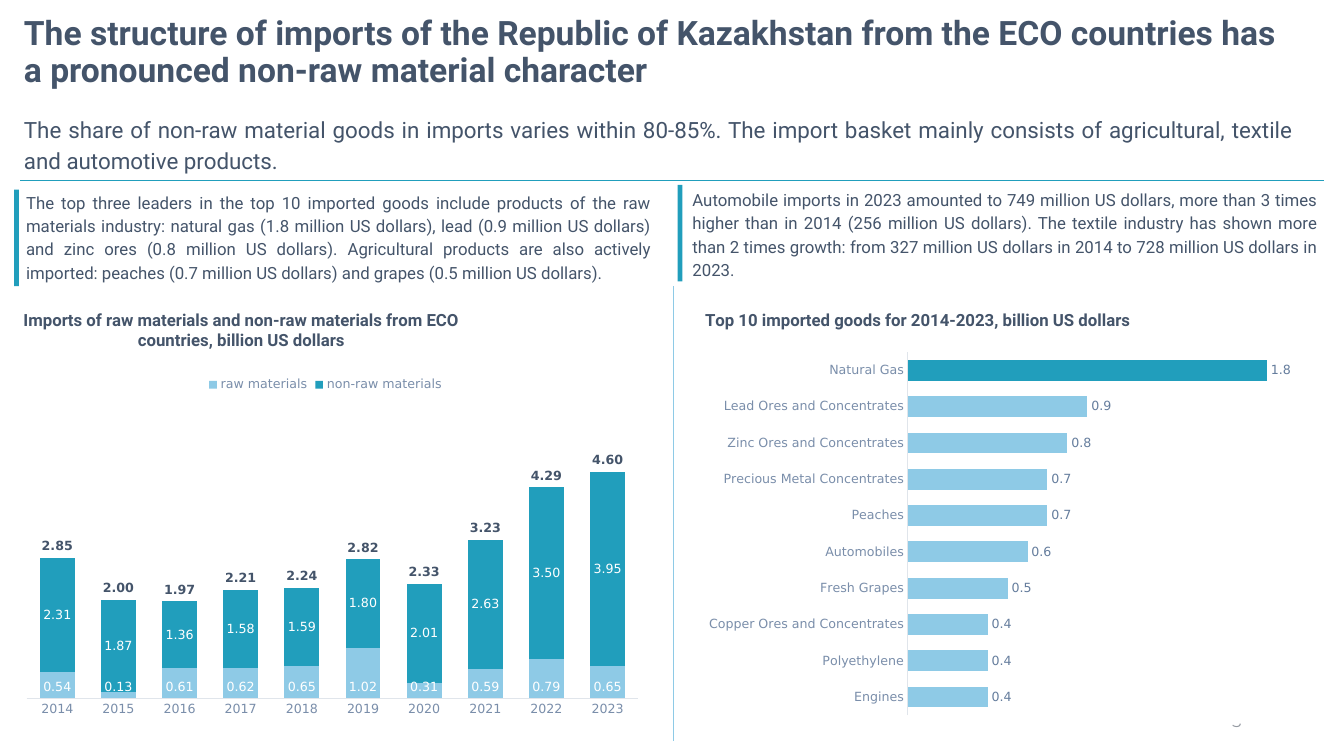
"""Build the slide on Kazakhstan's imports from the ECO countries."""
from pptx import Presentation
from pptx.chart.data import CategoryChartData
from pptx.dml.color import RGBColor
from pptx.enum.chart import XL_CHART_TYPE, XL_LABEL_POSITION, XL_LEGEND_POSITION, XL_TICK_MARK
from pptx.enum.shapes import MSO_CONNECTOR, MSO_SHAPE
from pptx.enum.text import MSO_ANCHOR, PP_ALIGN
from pptx.oxml import parse_xml
from pptx.oxml.ns import nsdecls, qn
from pptx.util import Pt

INK, TEAL, SKY, AXIS, MUTED = "44546A", "219EBC", "8ECAE6", "E0E5EB", "7A8EAA"


def style(font, color, **values):
    font.color.rgb = RGBColor.from_string(color)
    for name, value in values.items():
        setattr(font, name, value)


def place(element, index, **fractions):
    for old in element.findall(qn("c:layout")):
        element.remove(old)
    target = '<c:layoutTarget val="inner"/>' if "w" in fractions else ""
    modes = "".join(f'<c:{k}Mode val="edge"/>' for k in fractions if k in "xy")
    values = "".join(f'<c:{k} val="{v}"/>' for k, v in fractions.items())
    element.insert(index, parse_xml(
        f'<c:layout {nsdecls("c")}><c:manualLayout>{target}{modes}{values}'
        '</c:manualLayout></c:layout>'))


prs = Presentation()
prs.slide_width, prs.slide_height = Pt(960), Pt(540)
s = prs.slides.add_slide(prs.slide_layouts[6])

texts = [
    ((10, 11, 921, 54),
     "The structure of imports of the Republic of Kazakhstan from the ECO countries has "
     "a pronounced non-raw material character",
     INK, dict(size=Pt(24), name="Roboto", bold=True),
     dict(line_spacing=0.9), MSO_ANCHOR.MIDDLE),
    ((678, 500.5, 216, 29), "5", "9499A1", dict(size=Pt(12), name="Montserrat"),
     dict(alignment=PP_ALIGN.RIGHT), MSO_ANCHOR.MIDDLE),
    ((10, 76.5, 921, 50),
     "The share of non-raw material goods in imports varies within 80-85%. The import basket "
     "mainly consists of agricultural, textile and automotive products.",
     INK, dict(size=Pt(16), name="Roboto"),
     dict(alignment=PP_ALIGN.JUSTIFY, line_spacing=1.15), MSO_ANCHOR.TOP),
    ((11.5, 132, 461, 73),
     "The top three leaders in the top 10 imported goods include products of the raw materials "
     "industry: natural gas (1.8 million US dollars), lead (0.9 million US dollars) and zinc ores "
     "(0.8 million US dollars). Agricultural products are also actively imported: peaches "
     "(0.7 million US dollars) and grapes (0.5 million US dollars).",
     INK, dict(size=Pt(12), name="Roboto"),
     dict(alignment=PP_ALIGN.JUSTIFY, line_spacing=1.15), MSO_ANCHOR.TOP),
    ((487.5, 130, 461, 73),
     "Automobile imports in 2023 amounted to 749 million US dollars, more than 3 times higher "
     "than in 2014 (256 million US dollars). The textile industry has shown more than 2 times "
     "growth: from 327 million US dollars in 2014 to 728 million US dollars in 2023.",
     INK, dict(size=Pt(12), name="Roboto"),
     dict(alignment=PP_ALIGN.JUSTIFY, line_spacing=1.15), MSO_ANCHOR.TOP),
]
for box, text, color, font, layout, anchor in texts:
    tf = s.shapes.add_textbox(*map(Pt, box)).text_frame
    tf.word_wrap, tf.vertical_anchor = True, anchor
    p = tf.paragraphs[0]
    for name, value in layout.items():
        setattr(p, name, value)
    r = p.add_run()
    r.text = text
    style(r.font, color, **font)

for ends, color in [((14.5, 128.5, 945.5, 128.5), TEAL), ((481, 204.5, 481, 529), SKY)]:
    line = s.shapes.add_connector(MSO_CONNECTOR.STRAIGHT, *map(Pt, ends))
    line.line.color.rgb = RGBColor.from_string(color)
    line.line.width = Pt(0.5)
    line._element.spPr.append(parse_xml(f'<a:effectLst {nsdecls("a")}/>'))

for left, top in [(10, 135.5), (484, 132)]:
    sp = s.shapes.add_shape(MSO_SHAPE.RECTANGLE, Pt(left), Pt(top), Pt(3.5), Pt(69))
    sp.shadow.inherit = False
    sp.fill.solid()
    sp.fill.fore_color.rgb = RGBColor.from_string(TEAL)
    sp.line.fill.background()

BASE, CENTER, OUT = (XL_LABEL_POSITION.INSIDE_BASE, XL_LABEL_POSITION.CENTER,
                     XL_LABEL_POSITION.OUTSIDE_END)
charts = [
    dict(kind=XL_CHART_TYPE.COLUMN_STACKED, box=(10, 215.5, 455, 301.5), font="DejaVu Sans",
         title="Imports of raw materials and non-raw materials from ECO countries, "
               "billion US dollars",
         cats=[str(year) for year in range(2014, 2024)], top=6, fmt="0.00",
         plot=dict(x=0.02, y=0.24, w=0.96, h=0.7),
         series=[
             ("raw materials", [0.54, 0.13, 0.61, 0.62, 0.65, 1.02, 0.31, 0.59, 0.79, 0.65],
              SKY, BASE, "FFFFFF", False),
             ("non-raw materials", [2.31, 1.87, 1.36, 1.58, 1.59, 1.8, 2.01, 2.63, 3.5, 3.95],
              TEAL, CENTER, "FFFFFF", False),
             ("Series 3", [2.85, 2, 1.97, 2.21, 2.24, 2.82, 2.33, 3.23, 4.29, 4.6],
              None, BASE, INK, True)]),
    dict(kind=XL_CHART_TYPE.BAR_CLUSTERED, box=(497, 215.5, 445.5, 301.5), font="Montserrat",
         title="Top 10 imported goods for 2014-2023, billion US dollars",
         cats=["Natural Gas", "Lead Ores and Concentrates", "Zinc Ores and Concentrates",
               "Precious Metal Concentrates", "Peaches", "Automobiles", "Fresh Grapes",
               "Copper Ores and Concentrates", "Polyethylene", "Engines"], top=2, fmt="0.0",
         plot=dict(x=0.34, y=0.12, w=0.64, h=0.86),
         series=[("Series 1", [1.8, 0.9, 0.8, 0.7, 0.7, 0.6, 0.5, 0.4, 0.4, 0.4],
                  SKY, OUT, "657D9D", False)]),
]
for spec_ in charts:
    data = CategoryChartData(number_format=spec_["fmt"])
    data.categories = spec_["cats"]
    for name, values, *_ in spec_["series"]:
        data.add_series(name, values)
    chart = s.shapes.add_chart(spec_["kind"], *map(Pt, spec_["box"]), data).chart
    style(chart.font, INK, size=Pt(10), name=spec_["font"])
    r = chart.chart_title.text_frame.paragraphs[0].add_run()
    r.text = spec_["title"]
    style(r.font, INK, size=Pt(12), name="Roboto", bold=True)
    place(chart.chart_title._element, 1, x=0.01, y=0.01)
    place(chart.element.chart.plotArea, 0, **spec_["plot"])

    plot = chart.plots[0]
    plot.gap_width, plot.vary_by_categories = 75, False
    for series, (_, _, fill, position, color, bold) in zip(plot.series, spec_["series"]):
        if fill:
            series.format.fill.solid()
            series.format.fill.fore_color.rgb = RGBColor.from_string(fill)
        else:
            series.format.fill.background()
        labels = series.data_labels
        labels.show_value, labels.position = True, position
        labels.number_format, labels.number_format_is_linked = spec_["fmt"], False
        style(labels.font, color, size=Pt(9), name="DejaVu Sans", bold=bold)

    axis = chart.category_axis
    axis.major_tick_mark = axis.minor_tick_mark = XL_TICK_MARK.NONE
    axis.format.line.color.rgb = RGBColor.from_string(AXIS)
    axis.format.line.width = Pt(0.75)
    style(axis.tick_labels.font, MUTED, size=Pt(9), name="DejaVu Sans")
    scale = chart.value_axis
    scale.visible = scale.has_major_gridlines = False
    scale.minimum_scale, scale.maximum_scale = 0, spec_["top"]

    chart.has_legend = len(spec_["series"]) > 1
    if chart.has_legend:
        plot.overlap = 100
        legend = chart.legend
        legend.position, legend.include_in_layout = XL_LEGEND_POSITION.TOP, False
        style(legend.font, MUTED, size=Pt(9), name="DejaVu Sans")
        legend._element.insert(1, parse_xml(
            f'<c:legendEntry {nsdecls("c")}><c:idx val="2"/><c:delete val="1"/></c:legendEntry>'))
        place(legend._element, 2, x=0.3, y=0.17)
    else:
        axis.reverse_order = True
        point = plot.series[0].points[0].format.fill
        point.solid()
        point.fore_color.rgb = RGBColor.from_string(TEAL)
        chart.element.chart.addnext(parse_xml(
            f'<c:spPr {nsdecls("c", "a")}><a:solidFill><a:srgbClr val="FFFFFF"/></a:solidFill>'
            '<a:ln><a:noFill/></a:ln></c:spPr>'))

prs.save("out.pptx")
